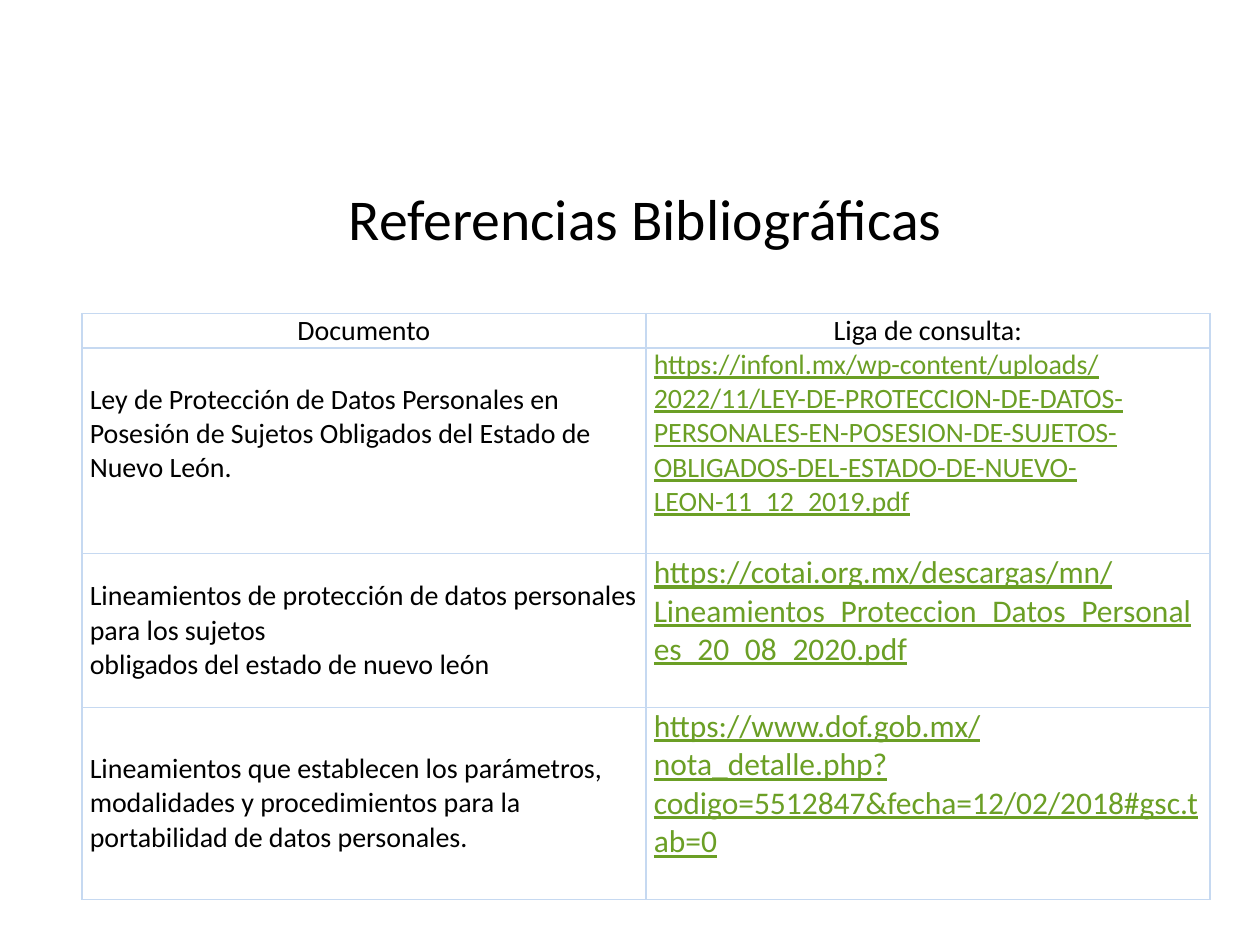
from lxml import etree
from pptx import Presentation
from pptx import util as u
from pptx.dml import color
from pptx.enum import text
from pptx.oxml import ns

FONT = "Calibri"
BLACK, LINK, BORDER = "000000", "6B9F25", "C6D9F1"
HEADINGS = ("Documento", "Liga de consulta:")
REFERENCES = [
    ("Ley de Protección de Datos Personales en Posesión de Sujetos Obligados del Estado de Nuevo León.",
     "https://infonl.mx/wp-content/uploads/2022/11/LEY-DE-PROTECCION-DE-DATOS-PERSONALES-EN-POSESION-DE-SUJETOS-OBLIGADOS-DEL-ESTADO-DE-NUEVO-LEON-11_12_2019.pdf",
     16, 4.15, 0.69),
    ("Lineamientos de protección de datos personales para los sujetos\nobligados del estado de nuevo león",
     "https://cotai.org.mx/descargas/mn/Lineamientos_Proteccion_Datos_Personales_20_08_2020.pdf",
     18, 3.1, 0),
    ("Lineamientos que establecen los parámetros, modalidades y procedimientos para la portabilidad de datos personales.",
     "https://www.dof.gob.mx/nota_detalle.php?codigo=5512847&fecha=12/02/2018#gsc.tab=0",
     18, 3.87, 0),
]


def rgb(value):
    """Turn a hex string into a colour."""
    return color.RGBColor.from_string(value)


def format_paragraphs(frame, size, align, ink=BLACK, underline=False):
    """Give every paragraph of a frame the same font and alignment."""
    for paragraph in frame.paragraphs:
        paragraph.alignment = align
        font = paragraph.font
        font.name, font.size, font.underline = FONT, u.Pt(size), underline
        font.color.rgb = rgb(ink)


def draw_borders(cell):
    """Draw a thin line on all four sides of a cell."""
    properties = cell._tc.get_or_add_tcPr()
    for side in ("a:lnL", "a:lnR", "a:lnT", "a:lnB"):
        line = etree.SubElement(properties, ns.qn(side), w=str(u.Pt(1)))
        fill = etree.SubElement(line, ns.qn("a:solidFill"))
        etree.SubElement(fill, ns.qn("a:srgbClr"), val=BORDER)


def fill_cell(cell, wording, size=16, align=text.PP_ALIGN.LEFT,
              anchor=text.MSO_ANCHOR.TOP, bottom=0, **style):
    """Write and format one borderless-margin table cell."""
    draw_borders(cell)
    cell.fill.background()
    cell.margin_left = cell.margin_right = u.Cm(0.16)
    cell.margin_top, cell.margin_bottom = 0, u.Cm(bottom)
    cell.vertical_anchor = anchor
    cell.text_frame.text = wording
    format_paragraphs(cell.text_frame, size, align, **style)


def place_title(slide, left, top, width, height):
    """Place the slide title in its box."""
    title = slide.shapes.title
    title.left, title.top = u.Cm(left), u.Cm(top)
    title.width, title.height = u.Cm(width), u.Cm(height)
    frame = title.text_frame
    frame.text = "Referencias Bibliográficas"
    frame.vertical_anchor = text.MSO_ANCHOR.MIDDLE
    format_paragraphs(frame, 33, text.PP_ALIGN.CENTER)
    frame.paragraphs[0].line_spacing = 0.9


def place_references(slide, left, top, width):
    """Place the table of documents and their links."""
    heights = [0.69] + [reference[3] for reference in REFERENCES]
    table = slide.shapes.add_table(
        len(heights), len(HEADINGS), u.Cm(left), u.Cm(top),
        u.Cm(width), u.Cm(sum(heights))).table
    table.horz_banding = table.first_row = False
    for row, height in zip(table.rows, heights):
        row.height = u.Cm(height)
    for column, heading in enumerate(HEADINGS):
        fill_cell(table.cell(0, column), heading, align=text.PP_ALIGN.CENTER)
    for row, (document, link, link_size, _, bottom) in enumerate(REFERENCES, 1):
        fill_cell(table.cell(row, 0), document,
                  anchor=text.MSO_ANCHOR.MIDDLE, bottom=bottom)
        fill_cell(table.cell(row, 1), link, link_size, ink=LINK, underline=True)


def main():
    """Build the slide of references and save it."""
    deck = Presentation()
    deck.slide_width, deck.slide_height = u.Cm(25.4), u.Cm(19.05)
    slide = deck.slides.add_slide(deck.slide_layouts[5])
    place_title(slide, 2.06, 2.64, 21.9, 3.68)
    place_references(slide, 1.65, 6.32, 22.74)
    deck.save("out.pptx")


if __name__ == "__main__":
    main()
